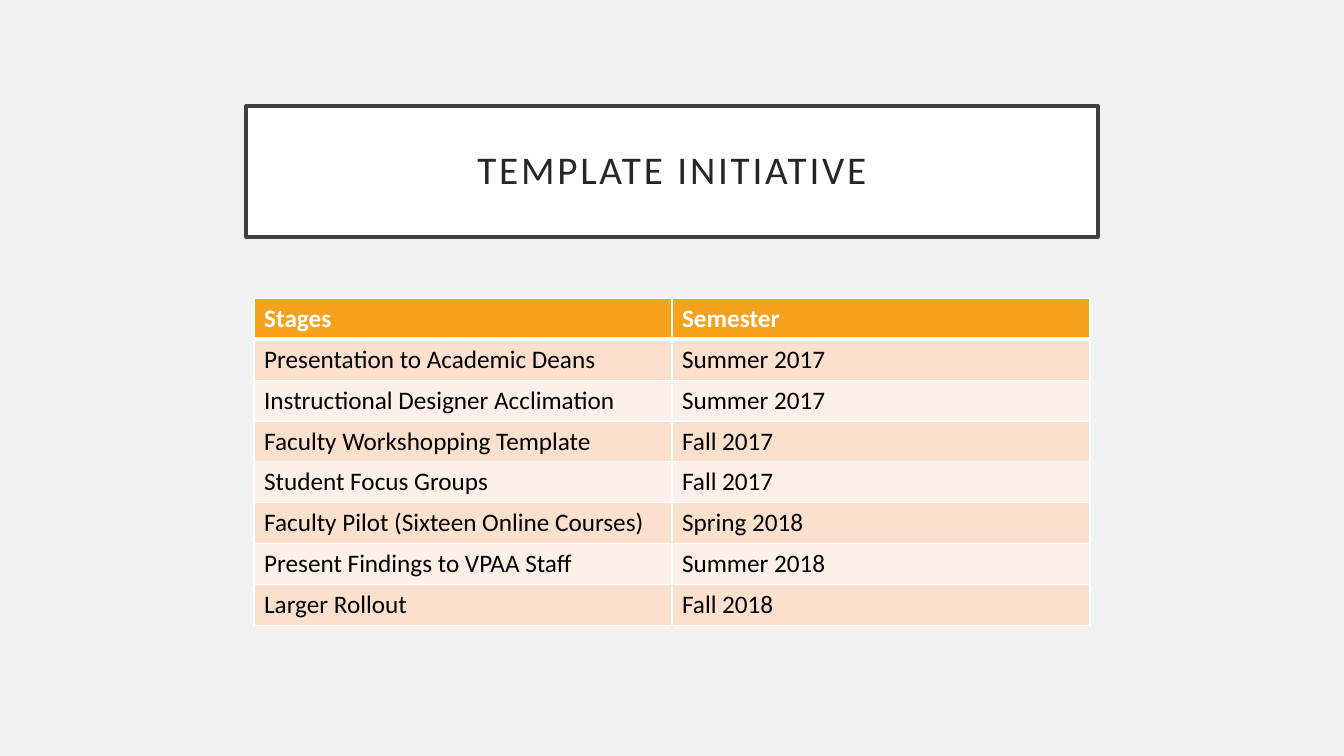
from dataclasses import dataclass

from lxml.etree import SubElement
from pptx import Presentation
from pptx.dml.color import RGBColor
from pptx.enum.shapes import MSO_SHAPE
from pptx.enum.text import MSO_ANCHOR, PP_ALIGN
from pptx.oxml.ns import qn
from pptx.slide import Slide
from pptx.table import _Cell as Cell
from pptx.text.text import TextFrame
from pptx.util import Inches, Pt

COLORS = {
    "back": "F2F2F2",
    "white": "FFFFFF",
    "frame": "404040",
    "title": "262626",
    "head": "F6A21D",
    "odd": "FBE0CD",
    "even": "FDF0E8",
    "text": "000000",
}
FONT = "Calibri"


@dataclass
class Stage:
    name: str
    term: str


STAGES = [
    Stage("Presentation to Academic Deans", "Summer 2017"),
    Stage("Instructional Designer Acclimation", "Summer 2017"),
    Stage("Faculty Workshopping Template", "Fall 2017"),
    Stage("Student Focus Groups", "Fall 2017"),
    Stage("Faculty Pilot (Sixteen Online Courses)", "Spring 2018"),
    Stage("Present Findings to VPAA Staff", "Summer 2018"),
    Stage("Larger Rollout", "Fall 2018"),
]


def color(name: str) -> RGBColor:
    return RGBColor.from_string(COLORS[name])


def write(frame: TextFrame, text: str, *, size: float = 18, ink: str = "text",
          bold: bool = False, align: PP_ALIGN = PP_ALIGN.LEFT,
          lead: float = 1.0, track: float = 0) -> None:
    """Put one formatted line in a frame; track is letter spacing in points."""
    para = frame.paragraphs[0]
    para.alignment = align
    para.line_spacing = lead
    run = para.add_run()
    run.text = text
    font = run.font
    font.name, font.size, font.bold = FONT, Pt(size), bold
    font.color.rgb = color(ink)
    if track:
        run._r.get_or_add_rPr().set("spc", str(int(track * 100)))


def edge(cell: Cell, sides: dict[str, float]) -> None:
    """Draw white borders, given widths in points by side: L, R, T, B."""
    props = cell._tc.get_or_add_tcPr()
    for side, width in sides.items():
        line = SubElement(props, qn(f"a:ln{side}"), w=str(Pt(width)))
        fill = SubElement(line, qn("a:solidFill"))
        SubElement(fill, qn("a:srgbClr"), val=COLORS["white"])


def add_title(slide: Slide) -> None:
    box = slide.shapes.add_shape(MSO_SHAPE.RECTANGLE, Inches(2.44), Inches(1.05),
                                 Inches(8.45), Inches(1.3))
    box.shadow.inherit = False
    box.fill.solid()
    box.fill.fore_color.rgb = color("white")
    box.line.color.rgb = color("frame")
    box.line.width = Pt(2.5)
    frame = box.text_frame
    frame.word_wrap = True
    frame.vertical_anchor = MSO_ANCHOR.MIDDLE
    frame.margin_left = frame.margin_right = Inches(0.2)
    frame.margin_top = frame.margin_bottom = Inches(0.2)
    write(frame, "TEMPLATE INITIATIVE", size=28, ink="title",
          align=PP_ALIGN.CENTER, lead=0.9, track=2)


def add_stages(slide: Slide) -> None:
    rows = [Stage("Stages", "Semester"), *STAGES]
    table = slide.shapes.add_table(len(rows), 2, Inches(2.52), Inches(2.96),
                                   Inches(8.29), Inches(3.2)).table
    for r, stage in enumerate(rows):
        head = r == 0
        tint = "head" if head else "odd" if r % 2 else "even"
        sides = {"L": 1, "R": 1, "T": 3 if r == 1 else 1, "B": 3 if head else 1}
        for c, text in enumerate((stage.name, stage.term)):
            cell = table.cell(r, c)
            edge(cell, sides)
            cell.fill.solid()
            cell.fill.fore_color.rgb = color(tint)
            write(cell.text_frame, text, ink="white" if head else "text", bold=head)


def main() -> None:
    deck = Presentation()
    deck.slide_width, deck.slide_height = Inches(13.33), Inches(7.5)
    slide = deck.slides.add_slide(deck.slide_layouts[6])
    back = slide.background.fill
    back.solid()
    back.fore_color.rgb = color("back")
    add_title(slide)
    add_stages(slide)
    deck.save("out.pptx")


if __name__ == "__main__":
    main()
